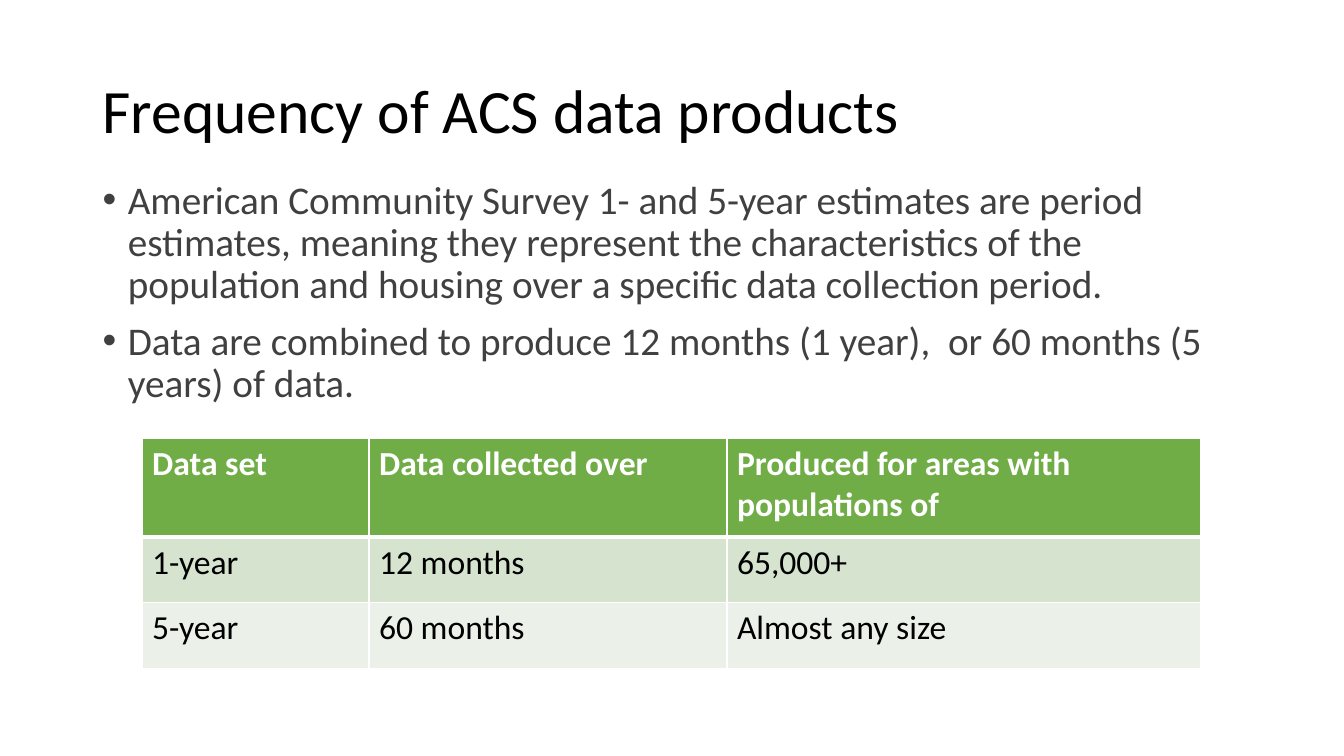
from dataclasses import dataclass

from lxml.etree import SubElement
from pptx import Presentation
from pptx.dml.color import RGBColor
from pptx.enum.text import MSO_ANCHOR
from pptx.oxml.ns import qn
from pptx.util import Inches, Pt


@dataclass(frozen=True)
class Theme:
    font: str = "Calibri"
    title: int = 44
    body: int = 28
    cell: int = 24
    black: str = "000000"
    gray: str = "404040"
    white: str = "FFFFFF"
    head: str = "70AD47"
    bands: tuple = ("D5E3CF", "EBF1E9")


class Deck:
    def __init__(self, theme):
        self.theme = theme
        self.show = Presentation()
        self.show.slide_width = Inches(13.33)
        self.show.slide_height = Inches(7.5)
        self.slide = self.show.slides.add_slide(self.show.slide_layouts[6])

    def add_text(self, para, text, size, color, bold=False):
        run = para.add_run()
        run.text = text
        font = run.font
        font.name = self.theme.font
        font.size = Pt(size)
        font.bold = bold
        font.color.rgb = RGBColor.from_string(color)

    def frame(self, left, top, width, height, anchor):
        box = self.slide.shapes.add_textbox(
            Inches(left), Inches(top), Inches(width), Inches(height))
        frame = box.text_frame
        frame.word_wrap = True
        frame.vertical_anchor = anchor
        return frame

    def title(self, text, *place):
        para = self.frame(*place, MSO_ANCHOR.MIDDLE).paragraphs[0]
        para.line_spacing = 0.9
        self.add_text(para, text, self.theme.title, self.theme.black)

    def bullets(self, items, *place):
        frame = self.frame(*place, MSO_ANCHOR.TOP)
        for i, text in enumerate(items):
            para = frame.add_paragraph() if i else frame.paragraphs[0]
            props = para._p.get_or_add_pPr()
            props.set("marL", str(Inches(0.25)))
            props.set("indent", str(Inches(-0.25)))
            SubElement(props, qn("a:buFont"), typeface="Arial")
            SubElement(props, qn("a:buChar"), char="•")
            para.line_spacing = 0.9
            if i:
                para.space_before = Pt(10)
            self.add_text(para, text, self.theme.body, self.theme.gray)

    def border(self, cell, row):
        """Draw white cell edges, with a thick rule under the header row."""
        props = cell._tc.get_or_add_tcPr()
        thick = {"T": row == 1, "B": row == 0}
        for side in "LRTB":
            width = Pt(3 if thick.get(side) else 1)
            line = SubElement(props, qn("a:ln" + side), w=str(width))
            fill = SubElement(line, qn("a:solidFill"))
            SubElement(fill, qn("a:srgbClr"), val=self.theme.white)

    def table(self, rows, left, top, widths, heights):
        theme = self.theme
        table = self.slide.shapes.add_table(
            len(rows), len(widths), Inches(left), Inches(top),
            Inches(sum(widths)), Inches(sum(heights))).table
        for col, width in zip(table.columns, widths):
            col.width = Inches(width)
        for r, (texts, height) in enumerate(zip(rows, heights)):
            table.rows[r].height = Inches(height)
            head = r == 0
            shade = theme.head if head else theme.bands[(r - 1) % 2]
            color = theme.white if head else theme.black
            for c, text in enumerate(texts):
                cell = table.cell(r, c)
                self.border(cell, r)
                cell.fill.solid()
                cell.fill.fore_color.rgb = RGBColor.from_string(shade)
                para = cell.text_frame.paragraphs[0]
                self.add_text(para, text, theme.cell, color, head)


def main():
    deck = Deck(Theme())
    deck.title("Frequency of ACS data products", 0.92, 0.4, 11.5, 1.45)
    deck.bullets([
        "American Community Survey 1- and 5-year estimates are period "
        "estimates, meaning they represent the characteristics of the "
        "population and housing over a specific data collection period.",
        "Data are combined to produce 12 months (1 year),  or 60 months "
        "(5 years) of data.",
    ], 0.92, 1.74, 11.5, 2.41)
    deck.table([
        ("Data set", "Data collected over",
         "Produced for areas with populations of"),
        ("1-year", "12 months", "65,000+"),
        ("5-year", "60 months", "Almost any size"),
    ], 1.41, 4.35, (2.25, 3.55, 4.7), (0.98, 0.65, 0.65))
    deck.show.save("out.pptx")


if __name__ == "__main__":
    main()
